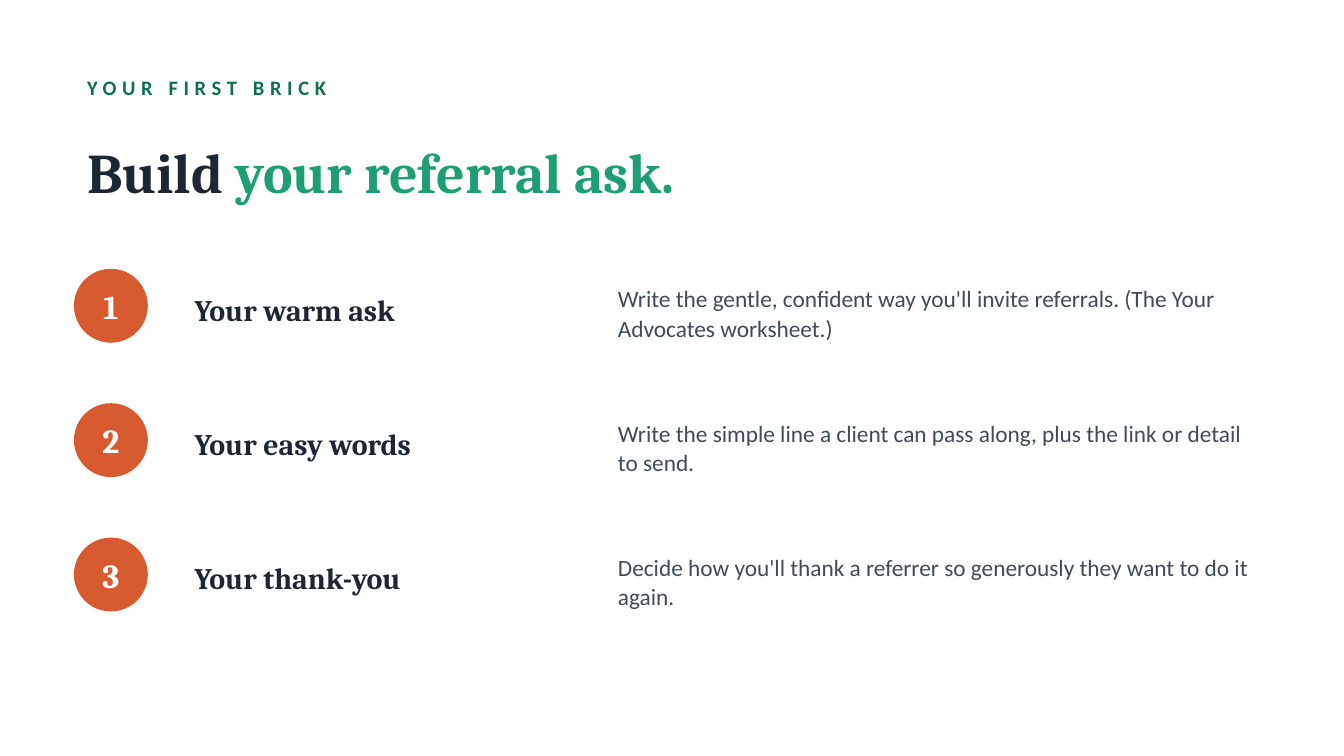
import pptx
import pptx.dml.color
import pptx.enum.shapes
import pptx.enum.text
import pptx.util

Inches = pptx.util.Inches
RGBColor = pptx.dml.color.RGBColor
Align = pptx.enum.text.PP_ALIGN

WHITE = RGBColor(0xFF, 0xFF, 0xFF)
INK = RGBColor(0x1C, 0x27, 0x33)
SLATE = RGBColor(0x3F, 0x4B, 0x59)
DARK_GREEN = RGBColor(0x0F, 0x6E, 0x56)
GREEN = RGBColor(0x1D, 0x9E, 0x75)
ORANGE = RGBColor(0xD8, 0x5A, 0x30)

HEADING_FONT = "Cambria"
BODY_FONT = "Calibri"

LEFT = 0.55
CIRCLE_SIZE = 0.55
FIRST_ROW = 2
ROW_PITCH = 1

STEPS = [
    ("Your warm ask",
     "Write the gentle, confident way you'll invite referrals. "
     "(The Your Advocates worksheet.)"),
    ("Your easy words",
     "Write the simple line a client can pass along, "
     "plus the link or detail to send."),
    ("Your thank-you",
     "Decide how you'll thank a referrer so generously "
     "they want to do it again."),
]


class SlideBuilder:
    def __init__(self, slide):
        self.slide = slide

    def background(self, color):
        fill = self.slide.background.fill
        fill.solid()
        fill.fore_color.rgb = color

    def text(self, left, top, width, height, runs, size, font=HEADING_FONT,
             bold=True, align=Align.LEFT, line_spacing=None, tracking=None):
        """Add one paragraph; runs is a list of (text, color) pairs."""
        box = self.slide.shapes.add_textbox(
            Inches(left), Inches(top), Inches(width), Inches(height))
        frame = box.text_frame
        frame.word_wrap = True
        frame.vertical_anchor = pptx.enum.text.MSO_ANCHOR.MIDDLE
        paragraph = frame.paragraphs[0]
        paragraph.alignment = align
        if line_spacing:
            paragraph.line_spacing = line_spacing
        for content, color in runs:
            run = paragraph.add_run()
            run.text = content
            run.font.name = font
            run.font.size = pptx.util.Pt(size)
            run.font.bold = bold
            run.font.color.rgb = color
            if tracking:
                # Letter spacing is stored in hundredths of a point
                run.font._element.set("spc", str(tracking * 100))

    def circle(self, left, top, size, color):
        shape = self.slide.shapes.add_shape(
            pptx.enum.shapes.MSO_SHAPE.OVAL,
            Inches(left), Inches(top), Inches(size), Inches(size))
        shape.shadow.inherit = False
        shape.fill.solid()
        shape.fill.fore_color.rgb = color
        shape.line.fill.background()

    def step(self, top, number, title, description):
        self.circle(LEFT, top, CIRCLE_SIZE, ORANGE)
        self.text(LEFT, top, CIRCLE_SIZE, CIRCLE_SIZE,
                  [(str(number), WHITE)], 18, align=Align.CENTER)
        self.text(1.35, top - 0.05, 3, 0.7, [(title, INK)], 16)
        self.text(4.5, top - 0.05, 5, 0.75, [(description, SLATE)], 12.5,
                  font=BODY_FONT, bold=False, line_spacing=1.05)


def main():
    presentation = pptx.Presentation()
    # Widescreen, 16:9
    presentation.slide_width = Inches(10)
    presentation.slide_height = Inches(10 * 9 / 16)
    slide = presentation.slides.add_slide(presentation.slide_layouts[6])
    builder = SlideBuilder(slide)
    builder.background(WHITE)

    # Heading
    builder.text(LEFT, 0.5, 8.9, 0.3, [("YOUR FIRST BRICK", DARK_GREEN)], 11,
                 font=BODY_FONT, tracking=3)
    builder.text(LEFT, 0.85, 8.9, 0.85,
                 [("Build ", INK), ("your referral ask.", GREEN)], 30)

    # Numbered steps
    for index, (title, description) in enumerate(STEPS):
        builder.step(FIRST_ROW + index * ROW_PITCH, index + 1,
                     title, description)

    presentation.save("out.pptx")


if __name__ == "__main__":
    main()
